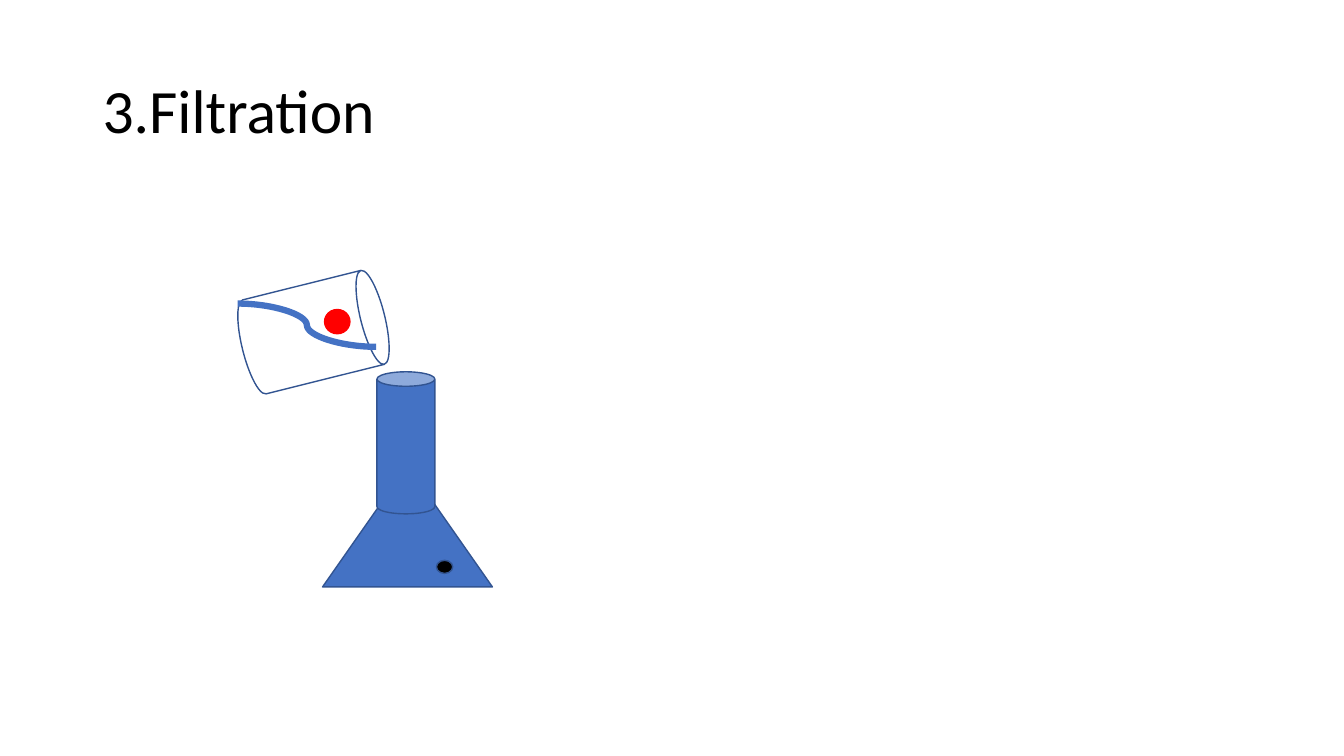
from lxml.etree import SubElement
from pptx import Presentation
from pptx.dml.color import RGBColor
from pptx.enum.shapes import MSO_CONNECTOR, MSO_SHAPE
from pptx.enum.text import MSO_ANCHOR, PP_ALIGN
from pptx.oxml.ns import qn
from pptx.util import Cm, Pt

WHITE = RGBColor(0xFF, 0xFF, 0xFF)
BLACK = RGBColor(0x00, 0x00, 0x00)
RED = RGBColor(0xFF, 0x00, 0x00)
BLUE = RGBColor(0x44, 0x72, 0xC4)
DARK_BLUE = RGBColor(0x32, 0x54, 0x91)


class SlideBuilder:
    font_name = "Calibri"
    title_size = Pt(44)
    outline_width = Pt(1)

    def __init__(self, presentation):
        title_only = presentation.slide_layouts[5]
        self.slide = presentation.slides.add_slide(title_only)

    def title(self, text, left, top, width, height):
        title = self.slide.shapes.title
        title.left, title.top = Cm(left), Cm(top)
        title.width, title.height = Cm(width), Cm(height)
        title.text_frame.vertical_anchor = MSO_ANCHOR.MIDDLE
        paragraph = title.text_frame.paragraphs[0]
        paragraph.alignment = PP_ALIGN.LEFT
        paragraph.line_spacing = 0.9
        run = paragraph.add_run()
        run.text = text
        run.font.name = self.font_name
        run.font.size = self.title_size
        run.font.color.rgb = BLACK

    def shape(self, kind, left, top, width, height, fill, line=DARK_BLUE, rotation=0):
        shape = self.slide.shapes.add_shape(
            kind, Cm(left), Cm(top), Cm(width), Cm(height))
        shape.shadow.inherit = False
        shape.rotation = rotation
        shape.fill.solid()
        shape.fill.fore_color.rgb = fill
        shape.line.color.rgb = line
        shape.line.width = self.outline_width

    def curve(self, start_x, start_y, end_x, end_y, color, width):
        curve = self.slide.shapes.add_connector(
            MSO_CONNECTOR.CURVE, Cm(start_x), Cm(start_y), Cm(end_x), Cm(end_y))
        curve.line.color.rgb = color
        curve.line.width = Pt(width)
        SubElement(curve._element.spPr, qn("a:effectLst"))


def main():
    presentation = Presentation()
    presentation.slide_width = Cm(33.87)
    presentation.slide_height = Cm(19.05)

    builder = SlideBuilder(presentation)
    builder.title("3.Filtration", 2.33, 1.01, 29.21, 3.68)

    # Tilted beaker, then the flask body and its neck
    builder.shape(MSO_SHAPE.CAN, 6.68, 6.53, 2.44, 3.68, WHITE, rotation=76)
    builder.shape(MSO_SHAPE.ISOSCELES_TRIANGLE, 8.13, 11.73, 4.28, 3.06, BLUE)
    builder.shape(MSO_SHAPE.CAN, 9.5, 9.37, 1.46, 3.58, BLUE)

    # Liquid surface and the two particles
    builder.curve(5.99, 7.65, 9.48, 8.74, BLUE, 4.5)
    builder.shape(MSO_SHAPE.FLOWCHART_CONNECTOR, 8.18, 7.8, 0.64, 0.61, RED, line=RED)
    builder.shape(MSO_SHAPE.FLOWCHART_CONNECTOR, 11.0, 14.12, 0.41, 0.33, BLACK)

    presentation.save("out.pptx")


if __name__ == "__main__":
    main()
